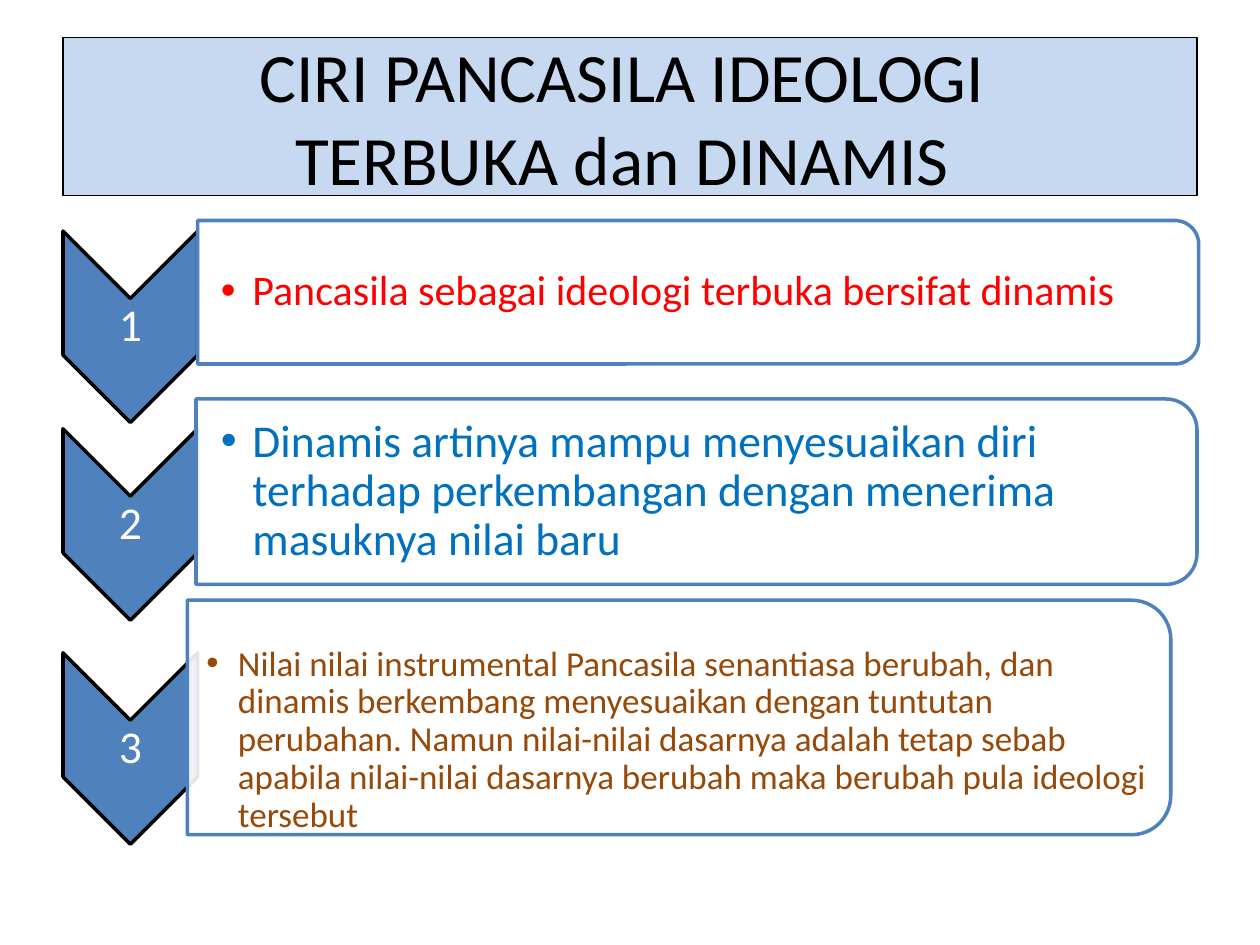
from pptx import Presentation
from pptx.dml.color import RGBColor as RGB
from pptx.enum.shapes import MSO_SHAPE as SHAPE
from pptx.enum.text import MSO_ANCHOR as ANCHOR, MSO_AUTO_SIZE as FIT, PP_ALIGN as ALIGN
from pptx.oxml.ns import qn
from pptx.util import Pt
from lxml.etree import SubElement

# Content
TITLE = "CIRI PANCASILA IDEOLOGI \vTERBUKA dan DINAMIS "
# number, text, size, colour, chevron top, panel box (left, top, width, height), text shift
POINTS = [
    ("1", "Pancasila sebagai ideologi terbuka bersifat dinamis",
     24, "FF0000", 132, (113, 126, 572, 82), 0),
    ("2", "Dinamis artinya mampu menyesuaikan diri terhadap perkembangan "
     "dengan menerima masuknya nilai baru",
     26, "0070C0", 245, (112, 228, 572, 106), 0),
    ("3", "Nilai nilai instrumental Pancasila senantiasa berubah, dan dinamis "
     "berkembang menyesuaikan dengan tuntutan perubahan. Namun nilai-nilai "
     "dasarnya adalah tetap sebab apabila nilai-nilai dasarnya berubah maka "
     "berubah pula ideologi tersebut",
     20, "984807", 373, (107, 343, 562, 134), 13),
]

# Theme and layout
THEME = dict(font="Calibri", title=39.6, number=26, black="000000", white="FFFFFF",
             blue="4F81BD", pale="C6D9F1", line=2, panel_alpha=90)
TITLE_BOX = (36, 21.6, 648, 90)
CHEVRON_LEFT, CHEVRON_W, CHEVRON_H = 36, 77, 109.4
NUMBER_H = 32
INDENT = 18


def paint(s, fill, line, width):
    s.shadow.inherit = False
    s.fill.solid()
    s.fill.fore_color.rgb = RGB.from_string(fill)
    s.line.color.rgb = RGB.from_string(line)
    s.line.width = Pt(width)


def add_turned(slide, kind, box, fill, line):
    """Add a shape turned by 90 degrees so that it covers box."""
    x, y, w, h = box
    s = slide.shapes.add_shape(kind, Pt(x + (w - h) / 2), Pt(y + (h - w) / 2), Pt(h), Pt(w))
    s.rotation = 90
    paint(s, fill, line, THEME["line"])
    return s


def write(s, text, size, color, align, spacing=0.9, left_inset=1.5):
    tf = s.text_frame
    tf.text = text
    tf.word_wrap, tf.auto_size, tf.vertical_anchor = True, FIT.NONE, ANCHOR.MIDDLE
    tf.margin_left = Pt(left_inset)
    tf.margin_top = tf.margin_right = tf.margin_bottom = Pt(1.5)
    p = tf.paragraphs[0]
    p.alignment, p.line_spacing = align, spacing
    for r in p.runs:
        r.font.name, r.font.size = THEME["font"], Pt(size)
        r.font.color.rgb = RGB.from_string(color)
    return p


def add_bullet(p):
    pPr = p._p.get_or_add_pPr()
    pPr.set("marL", str(Pt(INDENT)))
    pPr.set("indent", str(-Pt(INDENT)))
    SubElement(pPr, qn("a:buFont")).set("typeface", "Arial")
    SubElement(pPr, qn("a:buChar")).set("char", "•")


def set_alpha(s, percent):
    color = s.fill._xPr.find(qn("a:solidFill"))[0]
    SubElement(color, qn("a:alpha")).set("val", str(percent * 1000))


prs = Presentation()
prs.slide_width, prs.slide_height = Pt(720), Pt(540)
slide = prs.slides.add_slide(prs.slide_layouts[5])

# Title
s = slide.shapes.title
s.left, s.top, s.width, s.height = map(Pt, TITLE_BOX)
paint(s, THEME["pale"], THEME["black"], 0.75)
write(s, TITLE, THEME["title"], THEME["black"], ALIGN.CENTER, spacing=1.0)

for number, text, size, color, top, panel, shift in POINTS:
    # Numbered chevron
    add_turned(slide, SHAPE.CHEVRON, (CHEVRON_LEFT, top, CHEVRON_W, CHEVRON_H),
               THEME["blue"], THEME["black"])
    s = slide.shapes.add_textbox(Pt(CHEVRON_LEFT), Pt(top + (CHEVRON_H - NUMBER_H) / 2),
                                 Pt(CHEVRON_W), Pt(NUMBER_H))
    write(s, number, THEME["number"], THEME["white"], ALIGN.CENTER)

    # Panel with its bulleted text
    s = add_turned(slide, SHAPE.ROUND_2_SAME_RECTANGLE, panel, THEME["white"], THEME["blue"])
    set_alpha(s, THEME["panel_alpha"])
    x, y, w, h = panel
    s = slide.shapes.add_textbox(Pt(x), Pt(y + 4 + shift), Pt(w - 5), Pt(h - 8))
    add_bullet(write(s, text, size, color, ALIGN.LEFT, left_inset=size * 0.55))

prs.save("out.pptx")
